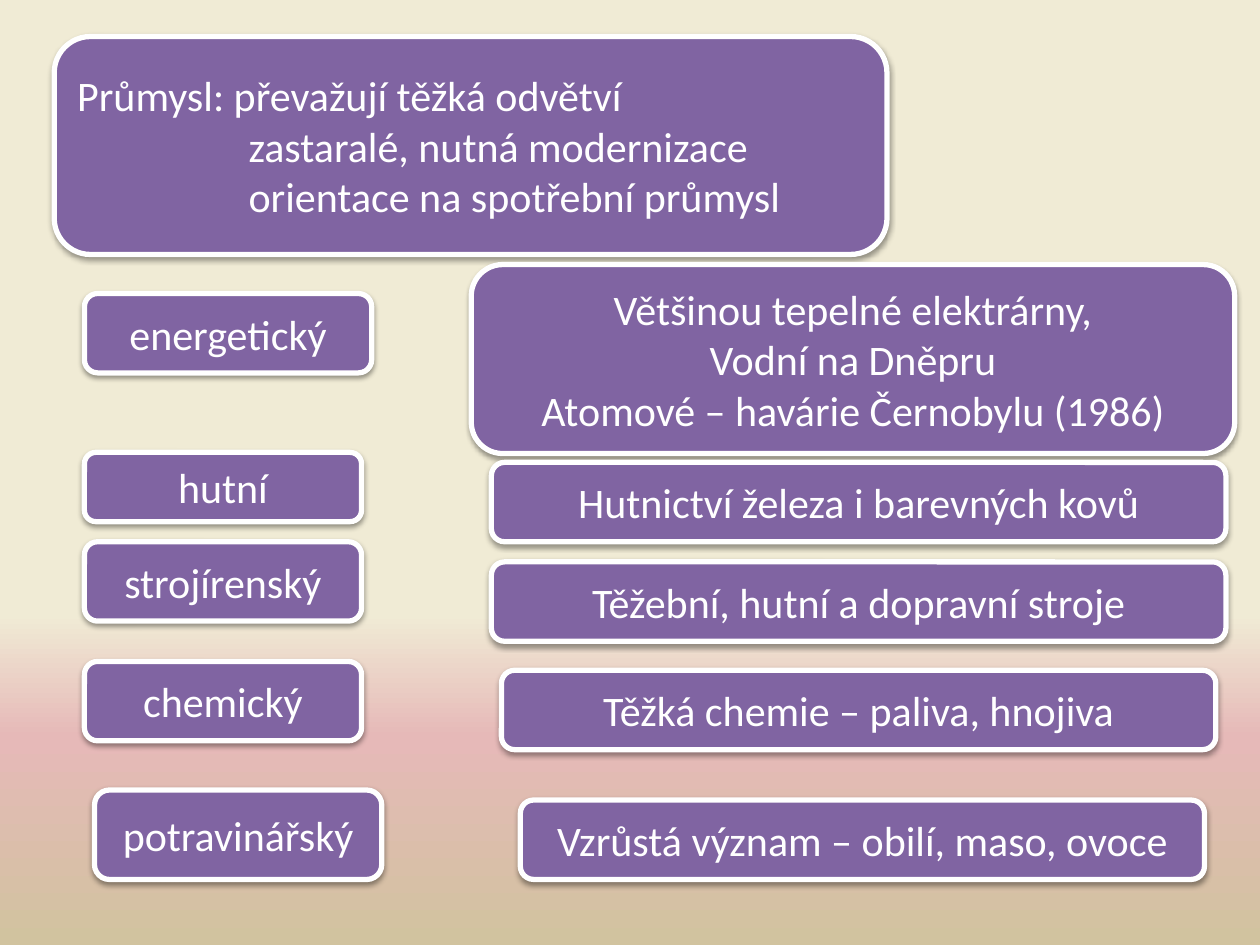
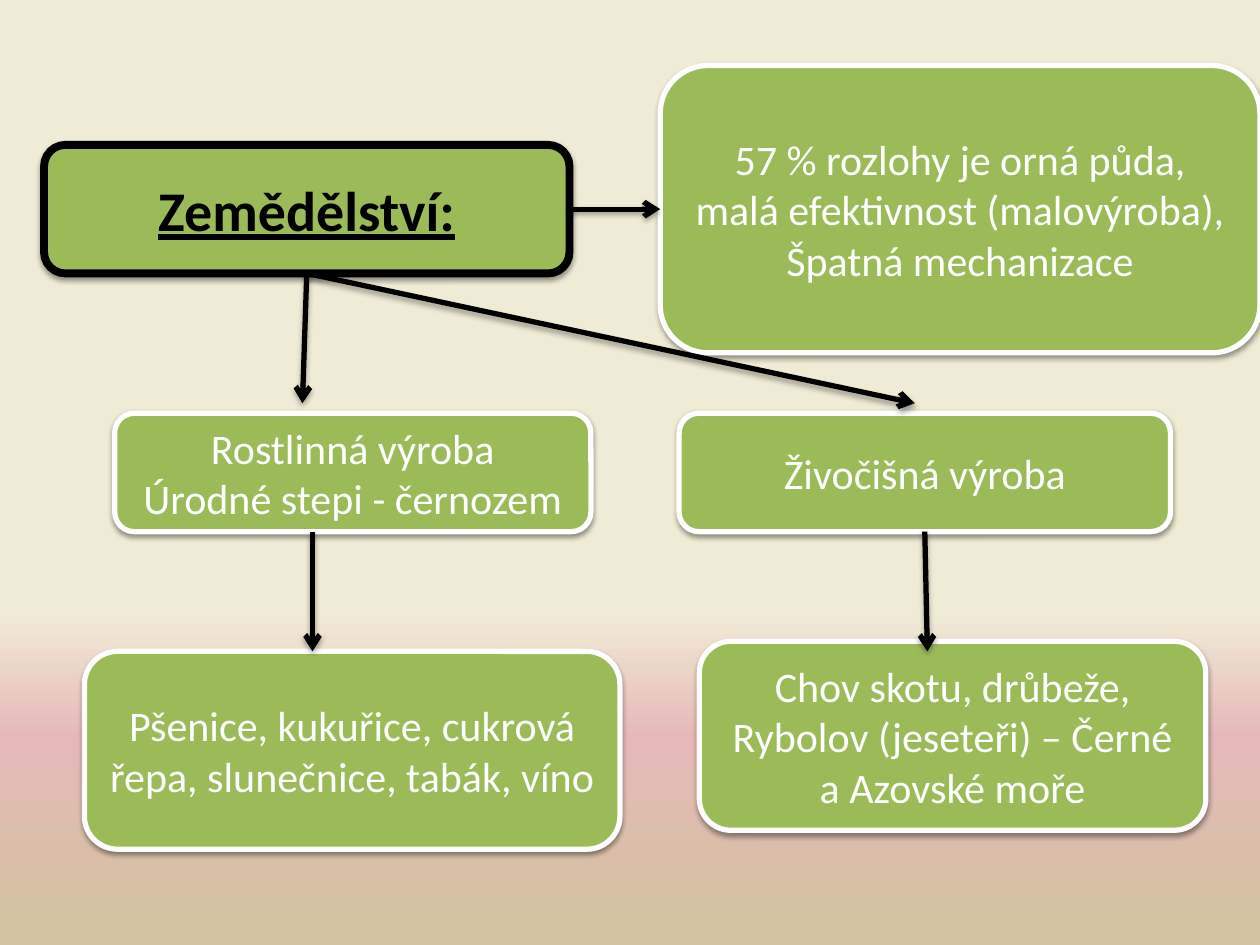
from lxml.etree import SubElement
from pptx import Presentation
from pptx.dml.color import RGBColor
from pptx.enum.shapes import MSO_CONNECTOR as Link, MSO_SHAPE as Shape
from pptx.enum.text import MSO_ANCHOR as Anchor, PP_ALIGN as Align
from pptx.oxml.ns import qn
from pptx.util import Inches, Pt

PURPLE, GREEN, WHITE, BLACK = "8064A2", "9BBB59", "FFFFFF", "000000"
BACKDROP = [(65, "F0EBD5"), (78, "E6B9B8"), (100, "D1C39F")]
TOP, LEFT, BOTTOM, RIGHT = range(4)
BODY_FONT = {"name": "Calibri", "size": Pt(24)}
HEADING_FONT = {"name": "Calibri", "size": Pt(32), "bold": True, "underline": True}


def rgb(value):
    return RGBColor.from_string(value)


def apply(target, formats):
    for name, value in formats.items():
        setattr(target, name, value)


def add_color(parent, value):
    return SubElement(parent, qn("a:srgbClr"), val=value)


class Deck:
    def __init__(self):
        self.prs = Presentation()
        apply(self.prs, {"slide_width": Inches(10), "slide_height": Inches(7.5)})
        self.paint_backdrop()

    def paint_backdrop(self):
        master = self.prs.slide_master
        fill = master.background.fill
        fill.gradient()
        fill.gradient_angle = 270
        stops = master.element.find(".//" + qn("a:gsLst"))
        for stop in list(stops):
            stops.remove(stop)
        for percent, color in BACKDROP:
            add_color(SubElement(stops, qn("a:gs"), pos=str(percent * 1000)), color)

    def new_slide(self, fill):
        self.slide = self.prs.slides.add_slide(self.prs.slide_layouts[6])
        self.fill = fill

    def cast_shadow(self, effects, percent):
        shadow = SubElement(effects, qn("a:outerShdw"), blurRad=str(Pt(3.1)),
                            dist=str(Pt(1.6)), dir="5400000", rotWithShape="0")
        SubElement(add_color(shadow, BLACK), qn("a:alpha"), val=str(percent * 1000))

    def box(self, place, lines, outline=WHITE, width=3, font=BODY_FONT,
            color=WHITE, align=Align.CENTER, hanging=0):
        box = self.slide.shapes.add_shape(Shape.ROUNDED_RECTANGLE, *map(Inches, place))
        box.fill.solid()
        box.fill.fore_color.rgb = rgb(self.fill)
        box.line.color.rgb = rgb(outline)
        box.line.width = Pt(width)
        box.shadow.inherit = False
        self.cast_shadow(box.element.spPr.find(qn("a:effectLst")), 38)
        frame = box.text_frame
        apply(frame, {"word_wrap": True, "vertical_anchor": Anchor.MIDDLE})
        for number, line in enumerate(lines.split("\n")):
            paragraph = frame.add_paragraph() if number else frame.paragraphs[0]
            paragraph.alignment = align
            if number and hanging:
                paragraph._p.get_or_add_pPr().set("marL", str(Inches(hanging)))
            run = paragraph.add_run()
            run.text = line
            apply(run.font, font)
            run.font.color.rgb = rgb(color)
        return box

    def arrow(self, start, end, source=None, target=None):
        arrow = self.slide.shapes.add_connector(Link.STRAIGHT, *map(Inches, start + end))
        arrow.line.color.rgb = rgb(BLACK)
        arrow.line.width = Pt(3)
        properties = arrow.element.spPr
        SubElement(properties.find(qn("a:ln")), qn("a:tailEnd"), type="arrow")
        self.cast_shadow(SubElement(properties, qn("a:effectLst")), 35)
        if source:
            arrow.begin_connect(*source)
        if target:
            arrow.end_connect(*target)


def add_industry(deck):
    deck.new_slide(PURPLE)
    deck.box((0.43, 0.29, 6.61, 1.73),
             "Průmysl: převažují těžká odvětví\n"
             "zastaralé, nutná modernizace\n"
             "orientace na spotřební průmysl",
             align=Align.LEFT, hanging=1.36)
    branches = [
        ("energetický", (0.67, 2.33, 2.28, 0.63),
         "Většinou tepelné elektrárny,\nVodní na Dněpru\nAtomové – havárie Černobylu (1986)",
         (3.74, 2.1, 6.06, 1.5)),
        ("hutní", (0.67, 3.59, 2.2, 0.55),
         "Hutnictví železa i barevných kovů", (3.9, 3.67, 5.83, 0.63)),
        ("strojírenský", (0.67, 4.3, 2.2, 0.63),
         "Těžební, hutní a dopravní stroje", (3.9, 4.46, 5.83, 0.63)),
        ("chemický", (0.67, 5.25, 2.2, 0.63),
         "Těžká chemie – paliva, hnojiva", (3.98, 5.32, 5.67, 0.63)),
        ("potravinářský", (0.75, 6.27, 2.28, 0.71),
         "Vzrůstá význam – obilí, maso, ovoce", (4.13, 6.35, 5.43, 0.63)),
    ]
    for branch, branch_place, detail, detail_place in branches:
        deck.box(branch_place, branch)
        deck.box(detail_place, detail)


def add_agriculture(deck):
    deck.new_slide(GREEN)
    heading = deck.box((0.35, 1.15, 4.17, 1.02), "Zemědělství:", outline=BLACK,
                       width=4.5, font=HEADING_FONT, color=BLACK)
    land = deck.box((5.24, 0.52, 4.76, 2.28),
                    "57 % rozlohy je orná půda,\nmalá efektivnost (malovýroba),\n"
                    "Špatná mechanizace")
    deck.box((0.91, 3.28, 3.78, 0.94), "Rostlinná výroba\nÚrodné stepi - černozem")
    livestock = deck.box((5.39, 3.28, 3.9, 0.94), "Živočišná výroba")
    deck.box((0.67, 5.17, 4.25, 1.57),
             "Pšenice, kukuřice, cukrová řepa, slunečnice, tabák, víno")
    deck.box((5.55, 5.09, 4.02, 1.5),
             "Chov skotu, drůbeže,\nRybolov (jeseteři) – Černé a Azovské moře")

    deck.arrow((4.52, 1.66), (5.24, 1.66), (heading, RIGHT), (land, LEFT))
    for end in [(2.4, 3.2), (7.26, 3.2)]:
        deck.arrow((2.44, 2.17), end, (heading, BOTTOM))
    deck.arrow((2.48, 4.22), (2.48, 5.17))
    deck.arrow((7.34, 4.22), (7.36, 5.17), (livestock, BOTTOM))


def main():
    deck = Deck()
    add_industry(deck)
    add_agriculture(deck)
    deck.prs.save("out.pptx")


if __name__ == "__main__":
    main()
